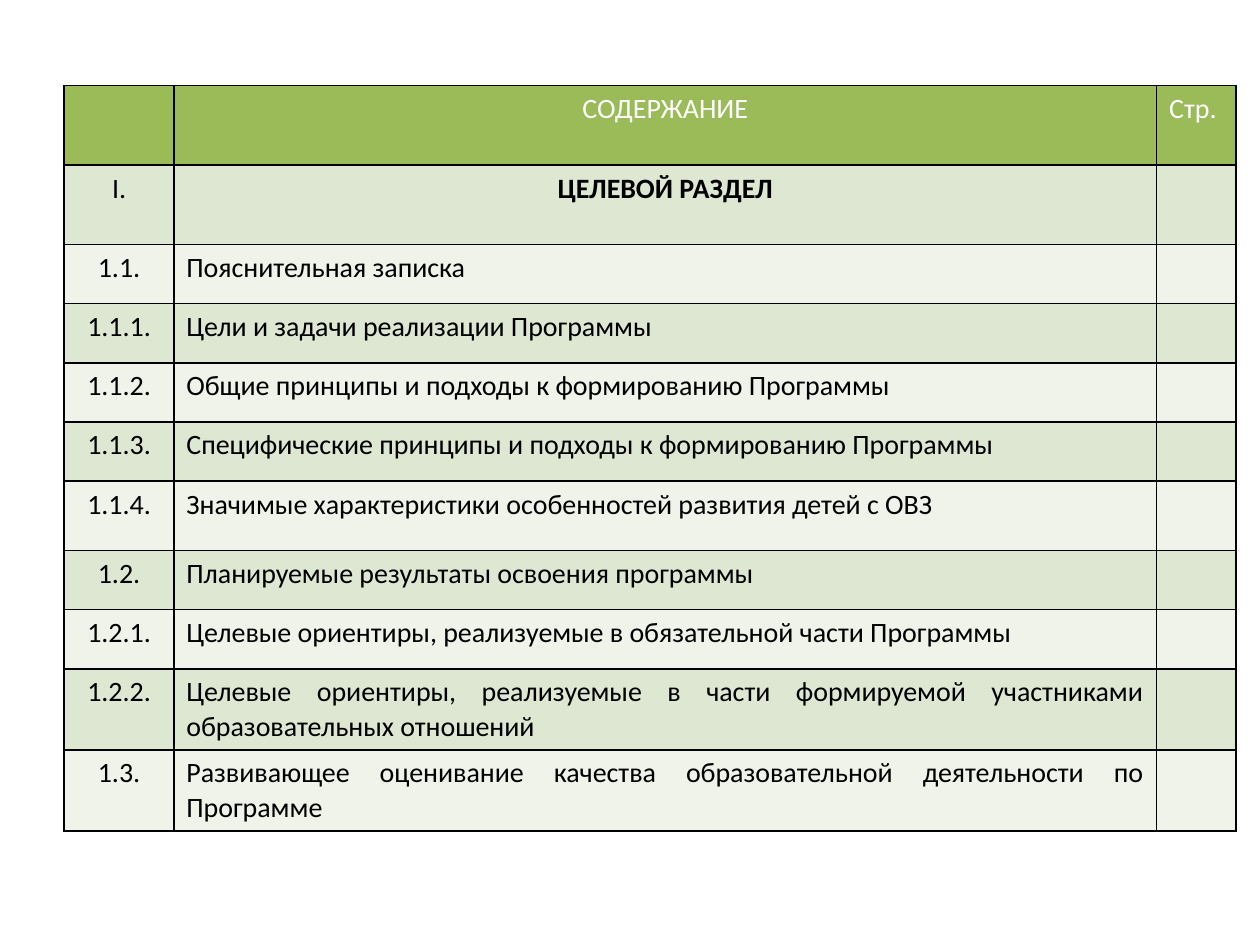
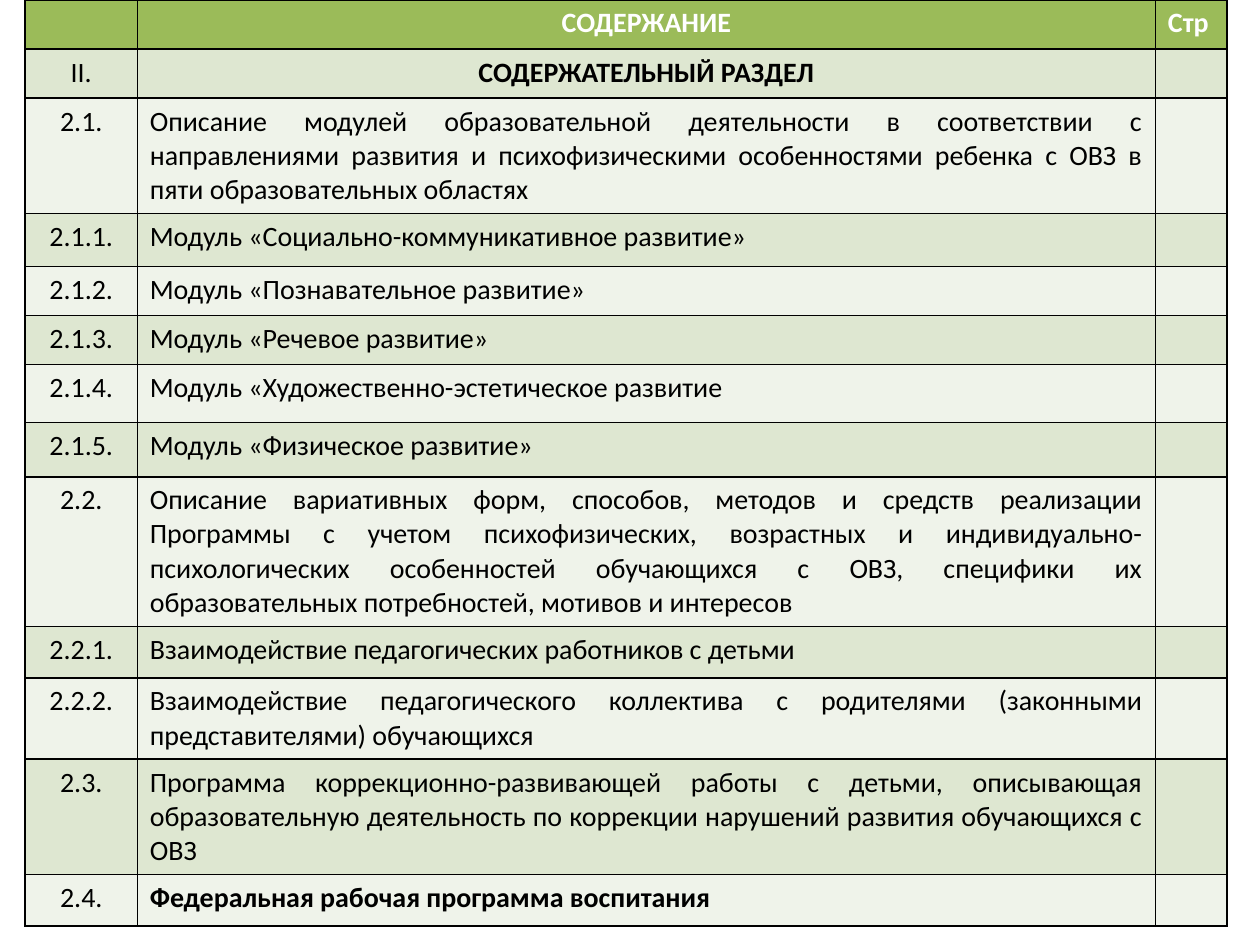
from pptx import Presentation
from pptx.dml.color import RGBColor
from pptx.enum.text import PP_ALIGN
from pptx.oxml import parse_xml
from pptx.oxml.ns import nsdecls
from pptx.util import Inches, Pt

HEADER_FILL = RGBColor(0x9B, 0xBB, 0x59)
BAND_FILLS = (RGBColor(0xDE, 0xE7, 0xD1), RGBColor(0xEF, 0xF3, 0xEA))
WHITE = RGBColor(0xFF, 0xFF, 0xFF)
BLACK = RGBColor(0, 0, 0)
FONT = "Calibri"
FONT_SIZE = Pt(16)
BORDER_WIDTH = Pt(1)

# Each entry: number, heading, row height in inches
TARGET_SECTION = [
    ("I.", "ЦЕЛЕВОЙ РАЗДЕЛ", 0.63),
    ("1.1.", "Пояснительная записка", 0.47),
    ("1.1.1.", "Цели и задачи реализации Программы", 0.47),
    ("1.1.2.", "Общие принципы и подходы к формированию Программы", 0.47),
    ("1.1.3.", "Специфические принципы и подходы к формированию Программы", 0.47),
    ("1.1.4.", "Значимые характеристики особенностей развития детей с ОВЗ", 0.55),
    ("1.2.", "Планируемые результаты освоения программы", 0.47),
    ("1.2.1.", "Целевые ориентиры, реализуемые в обязательной части Программы", 0.47),
    ("1.2.2.", "Целевые ориентиры, реализуемые в части формируемой участниками "
     "образовательных отношений", 0.63),
    ("1.3.", "Развивающее оценивание качества образовательной деятельности по "
     "Программе", 0.63),
]
CONTENT_SECTION = [
    ("II.", "СОДЕРЖАТЕЛЬНЫЙ РАЗДЕЛ", 0.39),
    ("2.1.", "Описание модулей образовательной деятельности в соответствии с "
     "направлениями развития и психофизическими особенностями ребенка с ОВЗ в "
     "пяти образовательных областях", 0.9),
    ("2.1.1.", "Модуль «Социально-коммуникативное развитие»", 0.42),
    ("2.1.2.", "Модуль «Познавательное развитие»", 0.39),
    ("2.1.3.", "Модуль «Речевое развитие»", 0.39),
    ("2.1.4.", "Модуль «Художественно-эстетическое развитие", 0.46),
    ("2.1.5.", "Модуль «Физическое развитие»", 0.43),
    ("2.2.", "Описание вариативных форм, способов, методов и средств реализации "
     "Программы с учетом психофизических, возрастных и "
     "индивидуально-психологических особенностей обучающихся с ОВЗ, специфики их "
     "образовательных потребностей, мотивов и интересов", 1.17),
    ("2.2.1.", "Взаимодействие педагогических работников с детьми", 0.41),
    ("2.2.2.", "Взаимодействие педагогического коллектива с родителями (законными "
     "представителями) обучающихся", 0.63),
    ("2.3.", "Программа коррекционно-развивающей работы с детьми, описывающая "
     "образовательную деятельность по коррекции нарушений развития обучающихся с "
     "ОВЗ", 0.9),
    ("2.4.", "Федеральная рабочая программа воспитания", 0.41),
]


def add_borders(cell):
    tc_pr = cell._tc.get_or_add_tcPr()
    for side in ("lnL", "lnR", "lnT", "lnB"):
        tc_pr.append(parse_xml(
            f'<a:{side} {nsdecls("a")} w="{BORDER_WIDTH}"><a:solidFill>'
            f'<a:srgbClr val="{BLACK}"/></a:solidFill></a:{side}>'))


def format_cell(cell, text, fill, color, align, bold=False):
    add_borders(cell)
    cell.fill.solid()
    cell.fill.fore_color.rgb = fill
    p = cell.text_frame.paragraphs[0]
    p.alignment = align
    if text:
        p.text = text
    else:
        # Keeps an empty cell from stretching its row
        p._p.get_or_add_endParaRPr().set("sz", str(int(FONT_SIZE.pt * 100)))
    p.font.name = FONT
    p.font.size = FONT_SIZE
    p.font.bold = bold
    p.font.color.rgb = color


def add_contents_table(s, left, top, col_widths, entries, page_label,
                       header_height, header_bold=False, bold_numbers=()):
    """Draw a contents table whose first entry is the section heading."""
    heights = [header_height] + [height for _, _, height in entries]
    table = s.shapes.add_table(
        len(heights), len(col_widths), Inches(left), Inches(top),
        Inches(sum(col_widths)), Inches(sum(heights))).table
    for column, width in zip(table.columns, col_widths):
        column.width = Inches(width)
    for row, height in zip(table.rows, heights):
        row.height = Inches(height)

    header_aligns = (PP_ALIGN.CENTER, PP_ALIGN.CENTER, PP_ALIGN.LEFT)
    for col, text in enumerate(("", "СОДЕРЖАНИЕ", page_label)):
        format_cell(table.cell(0, col), text, HEADER_FILL, WHITE,
                    header_aligns[col], header_bold)

    for i, (number, heading, _) in enumerate(entries):
        fill = BAND_FILLS[i % 2]
        bold = i == 0 or number in bold_numbers
        if i == 0:
            align = PP_ALIGN.CENTER
        else:
            align = PP_ALIGN.LEFT if bold else PP_ALIGN.JUSTIFY
        number_cell, heading_cell, page_cell = table.rows[i + 1].cells
        format_cell(number_cell, number, fill, BLACK, PP_ALIGN.CENTER)
        format_cell(heading_cell, heading, fill, BLACK, align, bold)
        format_cell(page_cell, "", fill, BLACK, PP_ALIGN.LEFT)


def main():
    prs = Presentation()
    prs.slide_width, prs.slide_height = Inches(10), Inches(7.5)
    blank = prs.slide_layouts[6]
    add_contents_table(prs.slides.add_slide(blank), 0.51, 0.68,
                       (0.87, 7.8, 0.63), TARGET_SECTION, "Стр.", 0.63)
    add_contents_table(prs.slides.add_slide(blank), 0.2, 0,
                       (0.89, 8.08, 0.57), CONTENT_SECTION, "Стр", 0.39,
                       header_bold=True, bold_numbers=("2.4.",))
    prs.save("out.pptx")


if __name__ == "__main__":
    main()
